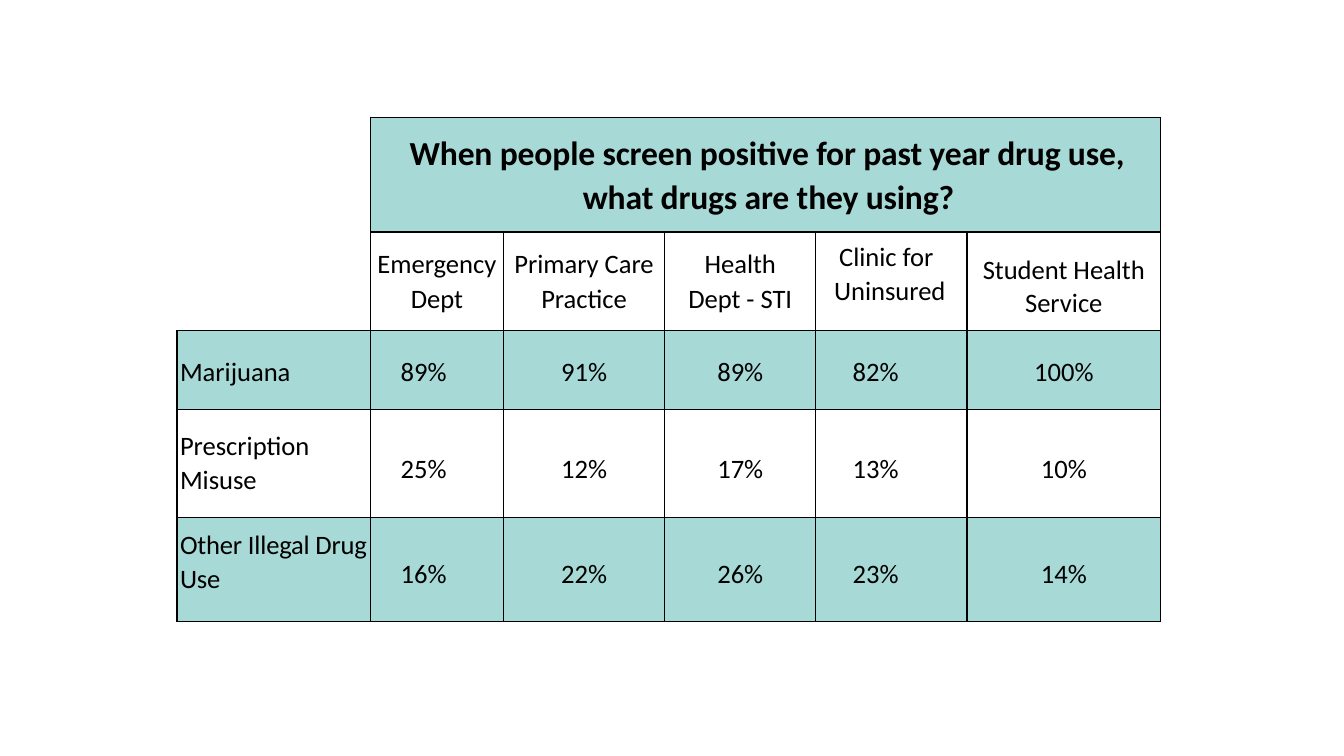
import pptx
import pptx.util
import pptx.dml.color
import pptx.enum.text
import pptx.oxml.ns
from lxml import etree

Pt = pptx.util.Pt
MID = pptx.enum.text.MSO_ANCHOR.MIDDLE
ALIGN = pptx.enum.text.PP_ALIGN
TEAL = "A7D9D6"
BLACK = "000000"
WIDTHS = [138.2, 95, 115.2, 108, 108, 138.2]
HEIGHTS = [82, 70.6, 56.2, 77, 74.2]

TITLE = "When people screen positive for past year drug use, what drugs are they using?"
HEADS = [
    (["Emergency", "Dept"], {"before": 0.4, "top": 0.7}),
    (["Primary Care", "Practice"], {"before": 0.4, "top": 0.7}),
    (["Health", "Dept - STI"], {"before": 0.4, "top": 0.7}),
    (["Clinic for", "Uninsured"], {"left": [16.6, 13], "lead": Pt(13.1)}),
    (["Student Health Service"], {"before": 7.6, "top": 7.9}),
]
DRUGS = [
    (["Marijuana"], {"before": 3.5, "top": 3.6},
     ["89%", "91%", "89%", "82%", "100%"], 3.6, 4, TEAL),
    (["Prescription", "Misuse"], {},
     ["25%", "12%", "17%", "13%", "10%"], 8.6, 8.4, None),
    (["Other Illegal Drug", "Use"], {"lead": Pt(13.8), "track": -0.1},
     ["16%", "22%", "26%", "23%", "14%"], 7.9, 7.7, TEAL),
]
INDENTS = {1: 21.6, 4: 26.3}


def color(code):
    return pptx.dml.color.RGBColor.from_string(code)


def edge(cell, sides):
    props = cell._tc.get_or_add_tcPr()
    for side in "LRTB":
        line = etree.SubElement(props, pptx.oxml.ns.qn("a:ln" + side), w=str(Pt(1)))
        if side in sides:
            fill = etree.SubElement(line, pptx.oxml.ns.qn("a:solidFill"))
            etree.SubElement(fill, pptx.oxml.ns.qn("a:srgbClr"), val=BLACK)
        else:
            etree.SubElement(line, pptx.oxml.ns.qn("a:noFill"))


def paint(cell, fill):
    if fill:
        cell.fill.solid()
        cell.fill.fore_color.rgb = color(fill)
    else:
        cell.fill.background()


def write(cell, lines, size=19, bold=False, left=None, hang=0,
          before=0, lead=None, top=0, track=0):
    cell.margin_left = cell.margin_right = cell.margin_bottom = 0
    cell.margin_top = Pt(top)
    cell.vertical_anchor = MID
    frame = cell.text_frame
    for i, text in enumerate(lines):
        para = frame.paragraphs[0] if i == 0 else frame.add_paragraph()
        para.alignment = ALIGN.CENTER if left is None or hang else ALIGN.LEFT
        if left is not None:
            props = para._p.get_or_add_pPr()
            props.set("marL", str(Pt(left[i])))
            props.set("indent", str(Pt(hang)))
        para.space_before = Pt(1.3 if i else before)
        if lead and i == 0:
            para.line_spacing = lead
        run = para.add_run()
        run.text = text
        run.font.name = "Calibri"
        run.font.size = Pt(size)
        run.font.bold = bold
        run.font.color.rgb = color(BLACK)
        if track:
            run.font._element.set("spc", str(round(track * 100)))


def head(grid):
    write(grid.cell(0, 1), [TITLE], size=24, bold=True, left=[4.3],
          hang=-2.2, lead=1.08, track=-0.1)
    for col, (lines, style) in enumerate(HEADS, 1):
        write(grid.cell(1, col), lines, **style)


def body(grid):
    for row, (label, style, shares, top, before, _) in enumerate(DRUGS, 2):
        write(grid.cell(row, 0), label, left=[2.2, 2.2], **style)
        for col, share in enumerate(shares, 1):
            left = [INDENTS[col]] if col in INDENTS else None
            gap = before - 0.5 if col == 4 else before
            write(grid.cell(row, col), [share], left=left, before=gap, top=top)


def chart(slide, x, y, wide, high):
    grid = slide.shapes.add_table(
        len(HEIGHTS), len(WIDTHS), Pt(x), Pt(y), Pt(wide), Pt(high)).table
    grid.first_row = grid.horz_banding = False
    for col, share in zip(grid.columns, WIDTHS):
        col.width = Pt(wide * share / sum(WIDTHS))
    for row, share in zip(grid.rows, HEIGHTS):
        row.height = Pt(high * share / sum(HEIGHTS))
    fills = [TEAL, None] + [drug[-1] for drug in DRUGS]
    for r, fill in enumerate(fills):
        for c in range(len(WIDTHS)):
            blank = r < 2 and c == 0
            cell = grid.cell(r, c)
            edge(cell, "RB" if blank else "LRTB")
            paint(cell, None if blank else fill)
    grid.cell(0, 0).merge(grid.cell(1, 0))
    grid.cell(0, 1).merge(grid.cell(0, 5))
    head(grid)
    body(grid)


def main():
    deck = pptx.Presentation()
    deck.slide_width = Pt(960)
    deck.slide_height = Pt(540)
    slide = deck.slides.add_slide(deck.slide_layouts[6])
    chart(slide, 126.4, 83.8, 702.6, 360)
    deck.save("out.pptx")


if __name__ == "__main__":
    main()
